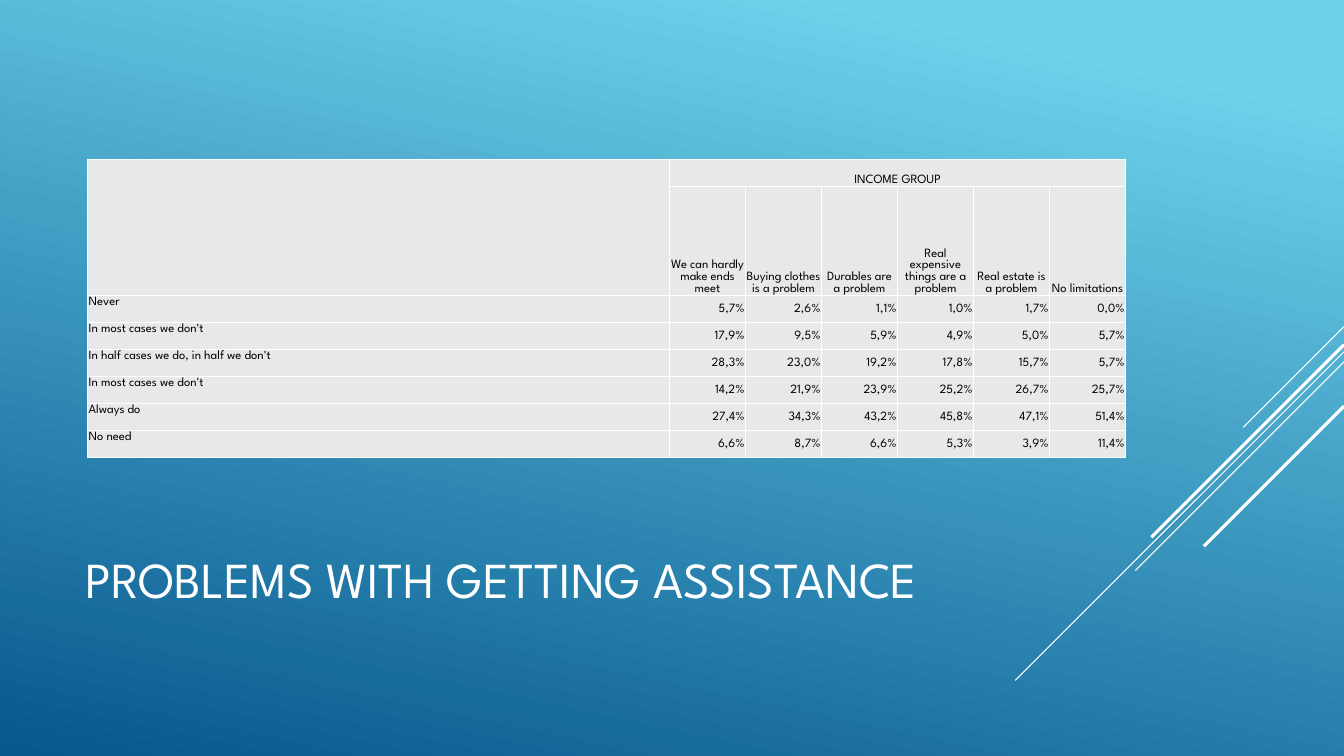
"""Builds a slide with a table of assistance problems by income group."""
from lxml import etree
from pptx import Presentation
from pptx.dml.color import RGBColor
from pptx.enum.shapes import MSO_CONNECTOR
from pptx.enum.text import MSO_ANCHOR, MSO_AUTO_SIZE, PP_ALIGN
from pptx.oxml.ns import qn
from pptx.util import Inches, Pt

STRAIGHT = MSO_CONNECTOR.STRAIGHT
TOP, MIDDLE, BOTTOM = MSO_ANCHOR.TOP, MSO_ANCHOR.MIDDLE, MSO_ANCHOR.BOTTOM
LEFT, CENTER, RIGHT = PP_ALIGN.LEFT, PP_ALIGN.CENTER, PP_ALIGN.RIGHT
NO_FIT = MSO_AUTO_SIZE.NONE

WHITE = RGBColor(0xFF, 0xFF, 0xFF)
BLACK = RGBColor(0x00, 0x00, 0x00)
GREY = RGBColor(0xE7, 0xE8, 0xEA)
SKY = RGBColor(0x6E, 0xD2, 0xEB)
NAVY = RGBColor(0x06, 0x58, 0x8E)

WIDTH, HEIGHT = 13.33, 7.5
STRIPES = [
    (3.24, 1.0, 0.75),
    (3.49, 3.26, 0.75),
    (3.59, 2.07, 0.75),
    (3.42, 1.91, 2.25),
    (4.03, 1.39, 2.25),
]
COL_WIDTHS = [5.77] + [0.754] * 6
ROW_HEIGHTS = [0.27, 1.08] + [0.268] * 6
ROWS = [
    ["", "INCOME GROUP", "", "", "", "", ""],
    ["", "We can hardly make ends meet", "Buying clothes is a problem",
     "Durables are a problem", "Real expensive things are a problem",
     "Real estate is a problem", "No limitations"],
    ["Never", "5,7%", "2,6%", "1,1%", "1,0%", "1,7%", "0,0%"],
    ["In most cases we don't", "17,9%", "9,5%", "5,9%", "4,9%", "5,0%", "5,7%"],
    ["In half cases we do, in half we don't",
     "28,3%", "23,0%", "19,2%", "17,8%", "15,7%", "5,7%"],
    ["In most cases we don't", "14,2%", "21,9%", "23,9%", "25,2%", "26,7%", "25,7%"],
    ["Always do", "27,4%", "34,3%", "43,2%", "45,8%", "47,1%", "51,4%"],
    ["No need", "6,6%", "8,7%", "6,6%", "5,3%", "3,9%", "11,4%"],
]


class SlideBuilder:
    def __init__(self, prs, font):
        self.font = font
        self.s = prs.slides.add_slide(prs.slide_layouts[5])

    def background(self, start, end, angle):
        fill = self.s.background.fill
        fill.gradient()
        fill.gradient_angle = 360 - angle
        for stop, (position, color) in zip(fill.gradient_stops, (start, end)):
            stop.position = position
            stop.color.rgb = color

    def format_text(self, p, size, color, align):
        p.alignment = align
        for r in p.runs:
            r.font.name = self.font
            r.font.size = Pt(size)
            r.font.color.rgb = color

    def title(self, text, left, top, width, height):
        sp = self.s.shapes.title
        sp.left, sp.top = Inches(left), Inches(top)
        sp.width, sp.height = Inches(width), Inches(height)
        tf = sp.text_frame
        tf.text = text
        tf.word_wrap = True
        tf.auto_size = NO_FIT
        tf.vertical_anchor = MIDDLE
        self.format_text(tf.paragraphs[0], 36, WHITE, LEFT)

    def line(self, x1, y1, x2, y2, weight):
        cn = self.s.shapes.add_connector(
            STRAIGHT, Inches(x1), Inches(y1), Inches(x2), Inches(y2))
        cn.line.color.rgb = WHITE
        cn.line.width = Pt(weight)
        etree.SubElement(cn._element.spPr, qn("a:effectLst"))

    def borders(self, cell):
        tc_pr = cell._tc.get_or_add_tcPr()
        for side in ("lnL", "lnR", "lnT", "lnB"):
            ln = etree.SubElement(tc_pr, qn(f"a:{side}"), w=str(Pt(1)))
            fill = etree.SubElement(ln, qn("a:solidFill"))
            etree.SubElement(fill, qn("a:srgbClr"), val=str(WHITE))

    def cell(self, cell, text, anchor, align):
        self.borders(cell)
        cell.fill.solid()
        cell.fill.fore_color.rgb = GREY
        cell.margin_left = cell.margin_right = cell.margin_top = Inches(0.01)
        cell.margin_bottom = 0
        cell.vertical_anchor = anchor
        cell.text = text
        self.format_text(cell.text_frame.paragraphs[0], 9, BLACK, align)

    def table(self, rows, left, top, col_widths, row_heights):
        table = self.s.shapes.add_table(
            len(rows), len(col_widths), Inches(left), Inches(top),
            Inches(sum(col_widths)), Inches(sum(row_heights))).table
        table.first_row = table.horz_banding = False
        for column, width in zip(table.columns, col_widths):
            column.width = Inches(width)
        for row, height in zip(table.rows, row_heights):
            row.height = Inches(height)
        for i, row in enumerate(rows):
            for j, text in enumerate(row):
                if i < 2:
                    anchor, align = BOTTOM, CENTER
                elif j == 0:
                    anchor, align = TOP, LEFT
                else:
                    anchor, align = MIDDLE, RIGHT
                self.cell(table.cell(i, j), text, anchor, align)
        table.cell(0, 0).merge(table.cell(1, 0))
        table.cell(0, 1).merge(table.cell(0, len(col_widths) - 1))


def main():
    prs = Presentation()
    prs.slide_width, prs.slide_height = Inches(WIDTH), Inches(HEIGHT)
    builder = SlideBuilder(prs, "League Spartan")
    builder.background((0.1, SKY), (1, NAVY), 102)
    for y, length, weight in STRIPES:
        builder.line(WIDTH, y, WIDTH - length, y + length, weight)
    builder.title("PROBLEMS WITH GETTING ASSISTANCE", 0.75, 4.91, 9.33, 1.65)
    builder.table(ROWS, 0.87, 1.58, COL_WIDTHS, ROW_HEIGHTS)
    prs.save("out.pptx")


if __name__ == "__main__":
    main()
